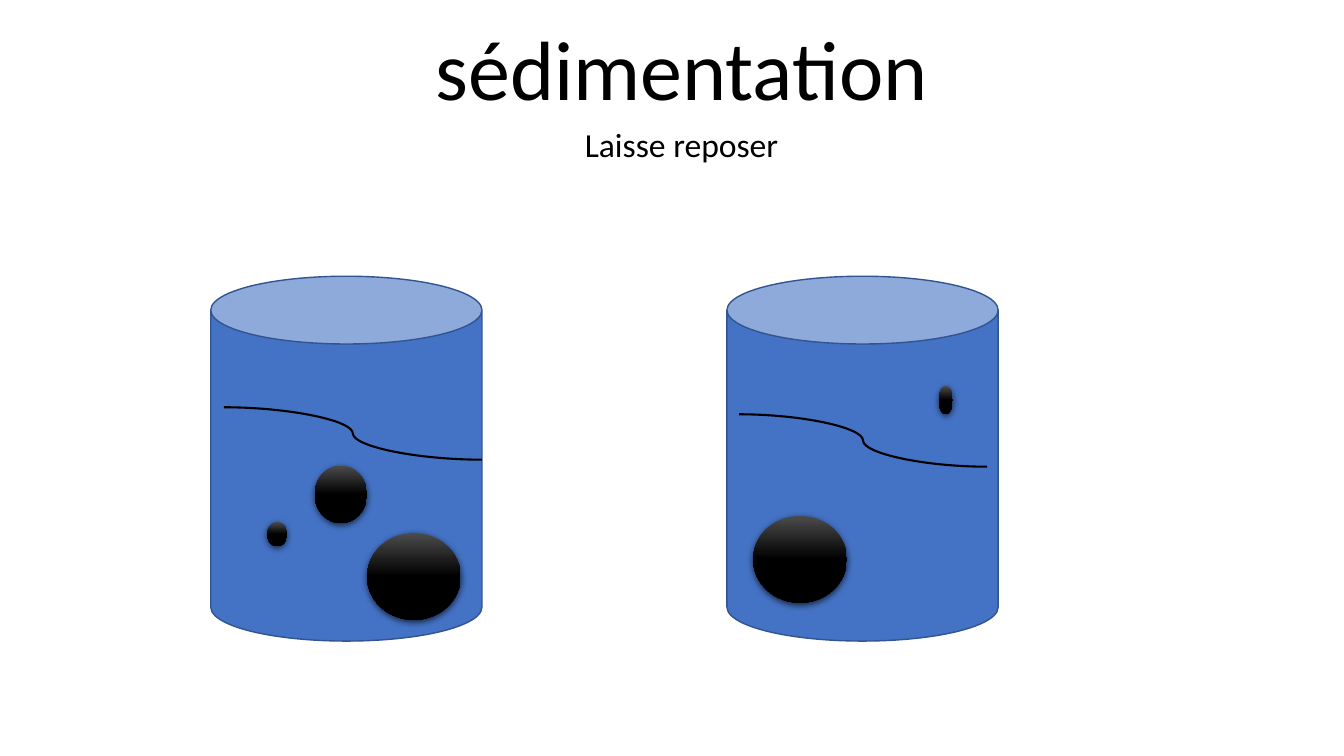
from lxml import etree
from pptx import Presentation
from pptx.dml.color import RGBColor
from pptx.enum import shapes, text
from pptx.oxml.ns import qn
from pptx.util import Inches, Pt

# Content: positions and sizes in inches
TEXTS = [  # wording, left, top, width, height, size, anchor
    ("sédimentation", 2.5, 0, 8.52, 1.23, 60, text.MSO_ANCHOR.BOTTOM),
    ("Laisse reposer", 1.76, 1.23, 10, 1.81, 24, text.MSO_ANCHOR.TOP),
]
JAR_TOP, JAR_WIDTH, JAR_HEIGHT = 2.74, 2.69, 3.62
JARS = [  # left edge, water line (from x, y to x, y), grains (left, top, width, height)
    {"left": 2.09, "water": (2.22, 4.04, 4.78, 4.56),
     "grains": [(3.64, 5.29, 0.93, 0.86), (3.12, 4.62, 0.52, 0.57),
                (2.65, 5.18, 0.2, 0.24)]},
    {"left": 7.21, "water": (7.33, 4.11, 9.79, 4.63),
     "grains": [(7.47, 5.12, 0.93, 0.86), (9.31, 3.83, 0.14, 0.28)]},
]
BLACK, GREY, BLUE, DARK_BLUE = "000000", "4B4B4B", "4472C4", "325491"


def color(value):
    return RGBColor.from_string(value)


def inches(values):
    return [Inches(value) for value in values]


def add_text(page, wording, left, top, width, height, size, anchor):
    box = page.shapes.add_textbox(*inches((left, top, width, height)))
    frame = box.text_frame
    frame.word_wrap = True
    frame.vertical_anchor = anchor
    para = frame.paragraphs[0]
    para.text = wording
    para.alignment = text.PP_ALIGN.CENTER
    para.line_spacing = 0.9
    para.font.name = "Calibri"
    para.font.size = Pt(size)
    para.font.color.rgb = color(BLACK)


def add_can(page, left):
    can = page.shapes.add_shape(
        shapes.MSO_SHAPE.CAN, *inches((left, JAR_TOP, JAR_WIDTH, JAR_HEIGHT)))
    can.shadow.inherit = False
    can.fill.solid()
    can.fill.fore_color.rgb = color(BLUE)
    can.line.color.rgb = color(DARK_BLUE)
    can.line.width = Pt(1)


def add_water(page, ends):
    curve = page.shapes.add_connector(shapes.MSO_CONNECTOR.CURVE, *inches(ends))
    curve.line.color.rgb = color(BLACK)
    curve.line.width = Pt(1.5)
    etree.SubElement(curve._element.spPr, qn("a:effectLst"))


def add_grain(page, bounds):
    grain = page.shapes.add_shape(shapes.MSO_SHAPE.OVAL, *inches(bounds))
    grain.line.fill.background()
    # Grey at the top, black from the middle down
    grain.fill.gradient()
    grain.fill.gradient_angle = 270
    for stop, place, shade in zip(grain.fill.gradient_stops, (0, 0.5), (GREY, BLACK)):
        stop.position = place
        stop.color.rgb = color(shade)
    # Soft shadow below
    grain.shadow.inherit = False
    effects = grain._element.spPr.find(qn("a:effectLst"))
    shadow = etree.SubElement(
        effects, qn("a:outerShdw"), blurRad=str(Pt(4.5)), dist=str(Pt(1.5)),
        dir="5400000", algn="ctr", rotWithShape="0")
    tint = etree.SubElement(shadow, qn("a:srgbClr"), val=BLACK)
    etree.SubElement(tint, qn("a:alpha"), val="63000")


def main():
    deck = Presentation()
    deck.slide_width, deck.slide_height = Inches(13.33), Inches(7.5)
    page = deck.slides.add_slide(deck.slide_layouts[6])
    for entry in TEXTS:
        add_text(page, *entry)
    for jar in JARS:
        add_can(page, jar["left"])
        add_water(page, jar["water"])
        for bounds in jar["grains"]:
            add_grain(page, bounds)
    deck.save("out.pptx")


if __name__ == "__main__":
    main()
